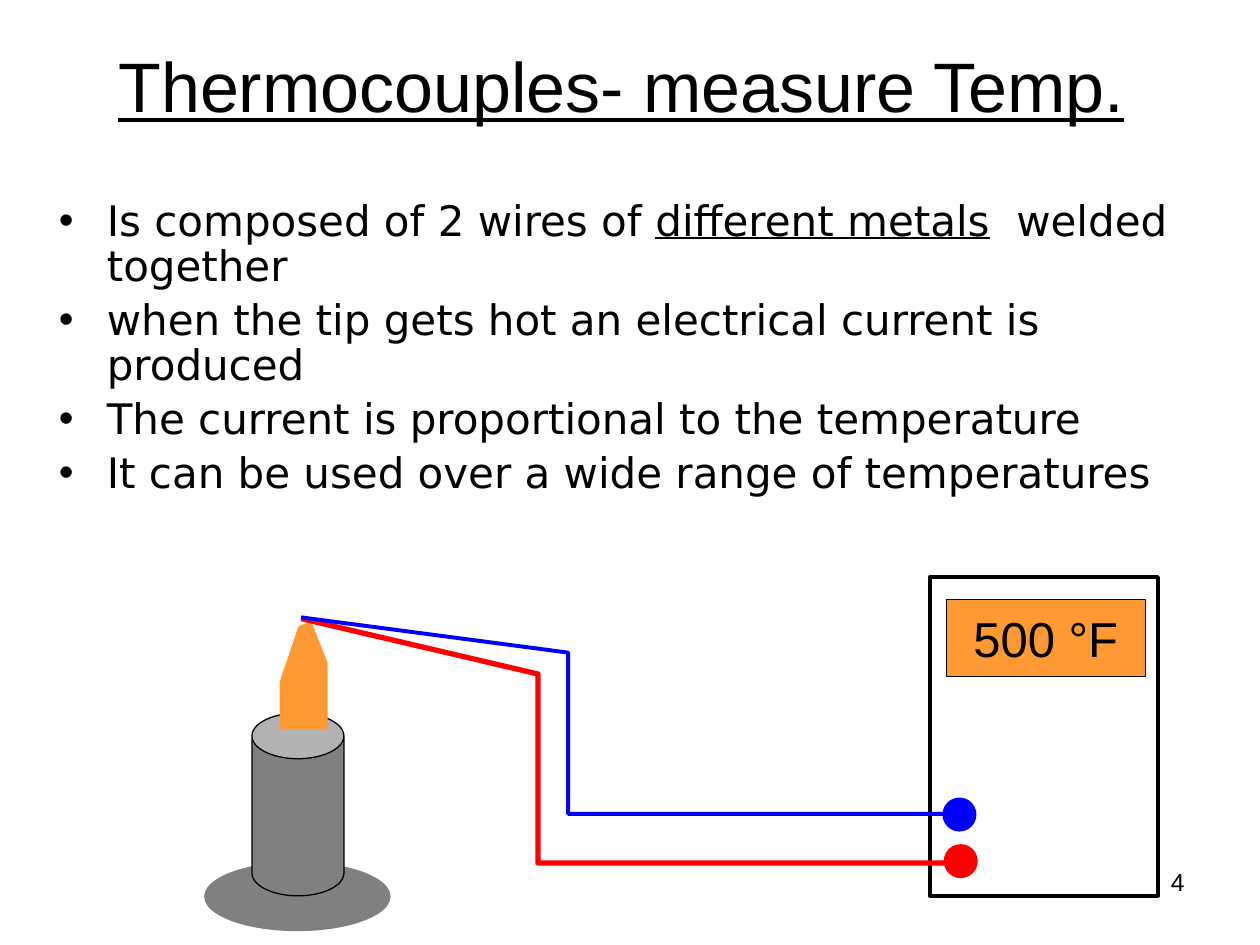
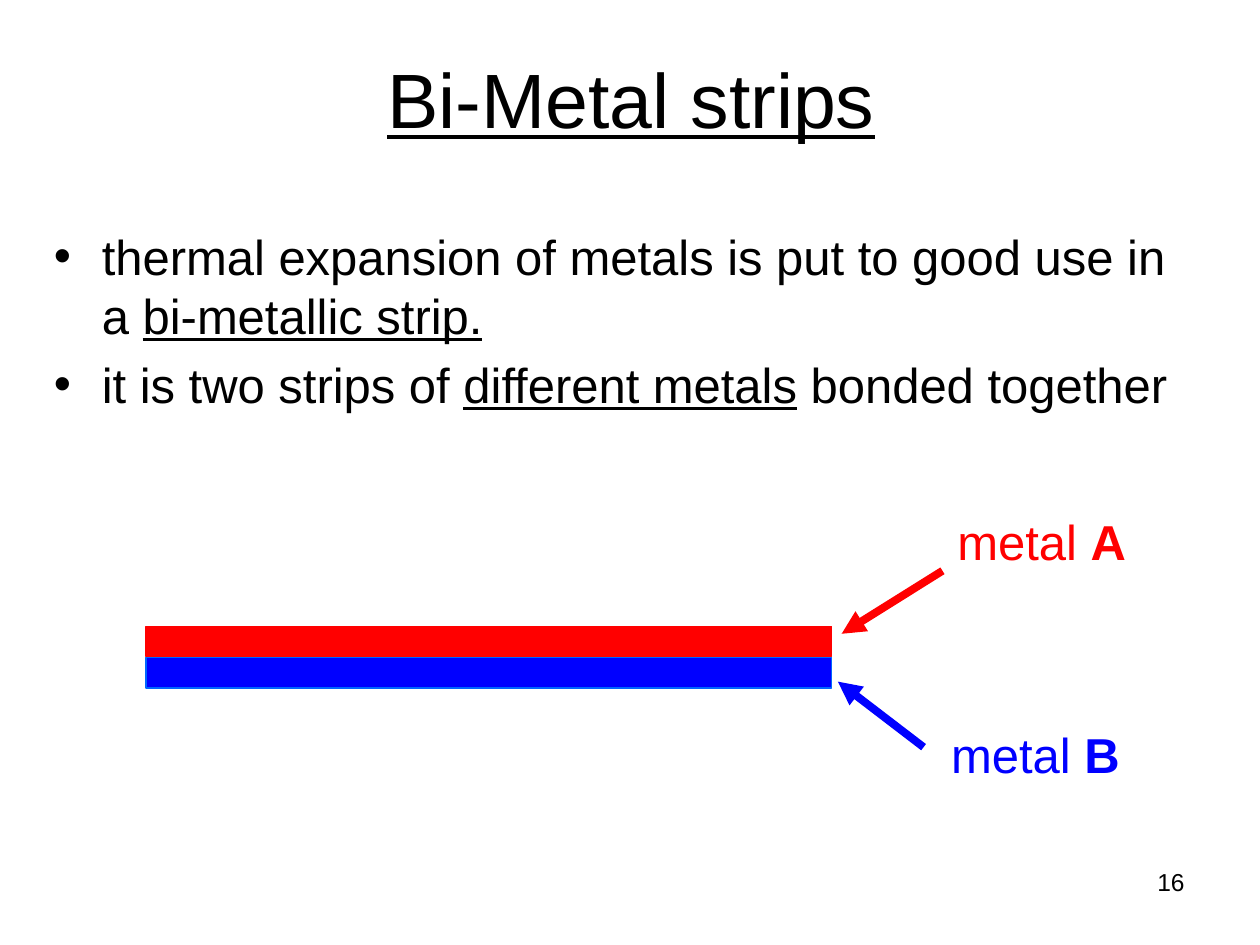
from lxml import etree
from pptx import Presentation
from pptx import util as u
from pptx.dml.color import RGBColor
from pptx.enum import shapes, text
from pptx.oxml.ns import qn

HEX = {"black": "000000", "white": "FFFFFF", "red": "FF0000", "blue": "0000FF",
       "azure": "0066FF", "orange": "FF9933", "gray": "808080"}
KINDS = shapes.MSO_SHAPE
ALIGN = text.PP_ALIGN
MIDDLE = text.MSO_ANCHOR.MIDDLE
NUMBER_BOX = (7.17, 6.83, 2.33, 0.52)
HANG = 0.38

# Each run is (wording, font settings that differ from its paragraph)
LINED, BOLD = {"underline": True}, {"bold": True}
THERMOCOUPLE = {
    "title": ("Thermocouples- measure Temp.", (0.43, 0.13, 9, 1.08), 40),
    "body_box": (0.37, 1.54, 9.06, 2.67),
    "body_font": {"name": "DejaVu Sans", "size": 24},
    "line_spacing": 0.9,
    "bullets": [
        [("Is composed of 2 wires of ", {}), ("different metals", LINED), ("  welded together", {})],
        [("when the tip gets hot an electrical current is produced", {})],
        [("The current is proportional to the temperature", {})],
        [("It can be used over a wide range of temperatures", {})],
    ],
    "number": "4",
}
BIMETAL = {
    "title": ("Bi-Metal strips", (0.51, 0.15, 9, 1.25), 44),
    "body_box": (0.33, 1.75, 9.17, 1.8),
    "body_font": {"name": "Arial", "size": 28},
    "line_spacing": 1.0,
    "bullets": [
        [("thermal expansion of metals is put to good use in a ", {}), ("bi-metallic strip.", LINED)],
        [("it is two strips of ", {}), ("different metals", LINED), (" bonded together", {})],
    ],
    "number": "16",
}

# kind, box, fill, line colour, line width
METER = [
    (KINDS.OVAL, (7.48, 6.33, 0.27, 0.27), "blue", None, 0),
    (KINDS.OVAL, (7.49, 6.7, 0.27, 0.27), "red", None, 0),
    (KINDS.RECTANGLE, (7.38, 4.58, 1.81, 2.53), None, "black", 2.25),
]
DISPLAY = (KINDS.RECTANGLE, (7.51, 4.76, 1.58, 0.61), "orange", "black", 0.75)
READING = "500 °F"
BURNER_FOOT = (KINDS.OVAL, (1.62, 6.84, 1.48, 0.55), "gray", None, 0)
BURNER_TUBE = (KINDS.CAN, (2, 5.66, 0.73, 1.45), "gray", "black", 0.75)
TUBE_RIM = 0.496
FLAME = [(2.22, 5.79), (2.22, 5.41), (2.37, 4.97), (2.47, 4.93), (2.6, 5.26), (2.6, 5.79)]
WIRES = [
    ([(2.39, 4.91), (4.27, 5.35), (4.27, 6.85), (7.63, 6.85)], "red", 3),
    ([(2.39, 4.9), (4.51, 5.18), (4.51, 6.46), (7.59, 6.46)], "blue", 2.25),
]

STRIP_BOX = (1.16, 4.97, 5.44, 0.24)
STRIP_STEP = 0.25
# letter, colour, strip outline, arrow start, arrow end, label corner
METALS = [
    ("A", "red", "red", (7.48, 4.53), (6.68, 5.03), (7.5, 4.01)),
    ("B", "blue", "azure", (7.33, 5.93), (6.65, 5.41), (7.45, 5.7)),
]
LABEL_SIZE = (1.54, 0.57)


def inches(values):
    return [u.Inches(value) for value in values]


def rgb(name):
    return RGBColor.from_string(HEX[name])


def set_all(target, values):
    for name, value in values.items():
        setattr(target, name, value)


def write_runs(para, runs, size, name="Arial", color="black"):
    for wording, extra in runs:
        span = para.add_run()
        span.text = wording
        set_all(span.font, {"name": name, "size": u.Pt(size), **extra})
        span.font.color.rgb = rgb(color)


def add_text(page, box, runs, size, color="black", align=ALIGN.LEFT, **frame):
    holder = page.shapes.add_textbox(*inches(box))
    set_all(holder.text_frame, {"word_wrap": True, **frame})
    para = holder.text_frame.paragraphs[0]
    para.alignment = align
    write_runs(para, runs, size, color=color)


def paint(shape, fill, line, width):
    shape.shadow.inherit = False
    if fill:
        shape.fill.solid()
        shape.fill.fore_color.rgb = rgb(fill)
    else:
        shape.fill.background()
    if line:
        shape.line.color.rgb = rgb(line)
        shape.line.width = u.Pt(width)
    else:
        shape.line.fill.background()
    return shape


def add_preset(page, kind, box, *look):
    return paint(page.shapes.add_shape(kind, *inches(box)), *look)


def add_outline(page, points, close, *look):
    start, *rest = [inches(point) for point in points]
    builder = page.shapes.build_freeform(*start)
    builder.add_line_segments(rest, close=close)
    return paint(builder.convert_to_shape(), *look)


def add_arrow(page, start, end, color):
    arrow = page.shapes.add_connector(shapes.MSO_CONNECTOR.STRAIGHT, *inches(start + end))
    arrow.line.color.rgb = rgb(color)
    arrow.line.width = u.Pt(4.5)
    etree.SubElement(arrow.line._get_or_add_ln(), qn("a:tailEnd"), type="triangle")
    etree.SubElement(arrow._element.spPr, qn("a:effectLst"))


def add_bullets(page, content):
    holder = page.shapes.add_textbox(*inches(content["body_box"]))
    frame = holder.text_frame
    frame.word_wrap = True
    font = content["body_font"]
    for index, runs in enumerate(content["bullets"]):
        para = frame.add_paragraph() if index else frame.paragraphs[0]
        set_all(para, {"line_spacing": content["line_spacing"],
                       "space_before": u.Pt(0.2 * font["size"])})
        props = para._p.get_or_add_pPr()
        props.set("marL", str(u.Inches(HANG)))
        props.set("indent", str(-u.Inches(HANG)))
        etree.SubElement(props, qn("a:buFont"), typeface="Arial")
        etree.SubElement(props, qn("a:buChar"), char="•")
        write_runs(para, runs, **font)


def add_page(deck, content):
    """Add a slide with the title, bullets and number that every slide has."""
    page = deck.slides.add_slide(deck.slide_layouts[6])
    page.background.fill.solid()
    page.background.fill.fore_color.rgb = rgb("white")
    title, box, size = content["title"]
    add_text(page, box, [(title, LINED)], size, align=ALIGN.CENTER, vertical_anchor=MIDDLE)
    add_bullets(page, content)
    add_text(page, NUMBER_BOX, [(content["number"], {})], 14, align=ALIGN.RIGHT)
    return page


def draw_thermocouple(page):
    for part in METER:
        add_preset(page, *part)
    display = add_preset(page, *DISPLAY)
    set_all(display.text_frame, {"word_wrap": False, "vertical_anchor": MIDDLE})
    para = display.text_frame.paragraphs[0]
    para.alignment = ALIGN.CENTER
    write_runs(para, [(READING, {})], 28)
    add_preset(page, *BURNER_FOOT)
    add_preset(page, *BURNER_TUBE).adjustments[0] = TUBE_RIM
    add_outline(page, FLAME, True, "orange", None, 0)
    for points, color, width in WIRES:
        add_outline(page, points, False, None, color, width)


def draw_strips(page):
    left, top, width, height = STRIP_BOX
    for row, (letter, color, outline, start, end, corner) in enumerate(METALS):
        box = (left, top + row * STRIP_STEP, width, height)
        add_preset(page, KINDS.RECTANGLE, box, color, outline, 0.75)
        add_arrow(page, start, end, color)
        add_text(page, corner + LABEL_SIZE, [("metal ", {}), (letter, BOLD)], 28, color,
                 word_wrap=False, auto_size=text.MSO_AUTO_SIZE.SHAPE_TO_FIT_TEXT)


def main():
    deck = Presentation()
    deck.slide_width, deck.slide_height = inches((10, 7.5))
    draw_thermocouple(add_page(deck, THERMOCOUPLE))
    draw_strips(add_page(deck, BIMETAL))
    deck.save("out.pptx")


if __name__ == "__main__":
    main()
